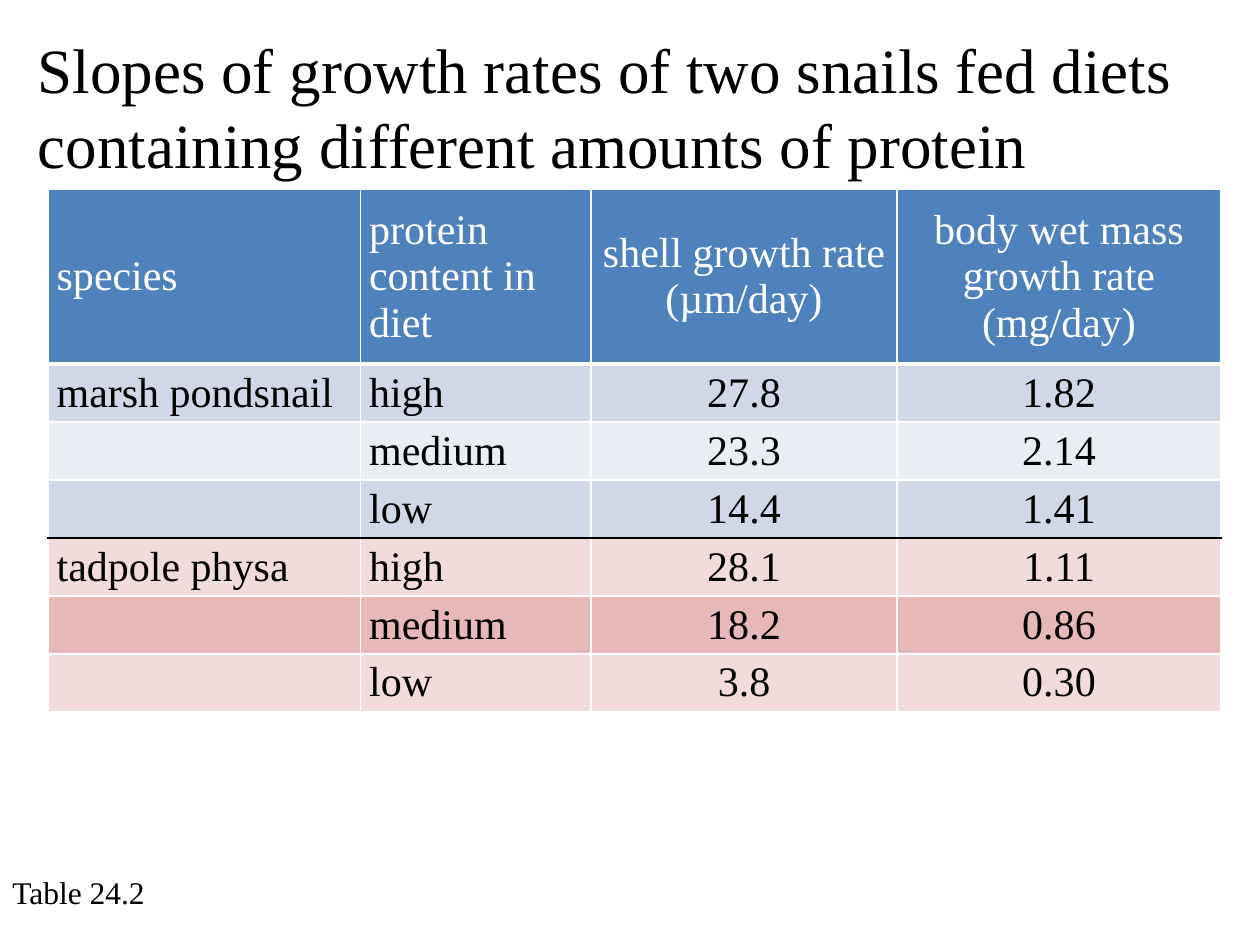
from typing import NamedTuple

from lxml.etree import SubElement
from pptx import Presentation
from pptx.dml.color import RGBColor
from pptx.enum.text import MSO_ANCHOR as Anchor, MSO_AUTO_SIZE as AutoSize, PP_ALIGN as Align
from pptx.oxml.ns import qn
from pptx.util import Inches, Pt

FONT = "Times New Roman"
COLORS = {
    "black": "000000",
    "white": "FFFFFF",
    "header": "4F81BD",
    "blue": "D0D8E8",
    "pale blue": "E9EDF4",
    "pink": "F2DCDB",
    "rose": "E6B9B8",
}


class Rule(NamedTuple):
    color: str
    points: float


class Row(NamedTuple):
    texts: tuple[str, ...]
    fill: str
    below: Rule
    ink: str = "black"
    height: float = 0.46


THIN = Rule("white", 1)
HEADER_RULE = Rule("white", 3)
SPECIES_RULE = Rule("black", 1)

COLUMN_WIDTHS = (2.48, 1.83, 2.43, 2.57)
COLUMN_ALIGNMENTS = (Align.LEFT, Align.LEFT, Align.CENTER, Align.CENTER)
ROWS = (
    Row(("species", "protein content in diet", "shell growth rate (µm/day)",
         "body wet mass growth rate (mg/day)"), "header", HEADER_RULE, "white", 1.39),
    Row(("marsh pondsnail", "high", "27.8", "1.82"), "blue", THIN),
    Row(("", "medium", "23.3", "2.14"), "pale blue", THIN),
    Row(("", "low", "14.4", "1.41"), "blue", SPECIES_RULE),
    Row(("tadpole physa", "high", "28.1", "1.11"), "pink", THIN),
    Row(("", "medium", "18.2", "0.86"), "rose", THIN),
    Row(("", "low", "3.8", "0.30"), "pink", THIN),
)


def write(frame, text: str, size: float, ink: str, align=Align.LEFT) -> None:
    frame.text = text
    for para in frame.paragraphs:
        para.alignment = align
        for span in para.runs:
            span.font.name = FONT
            span.font.size = Pt(size)
            span.font.color.rgb = RGBColor.from_string(COLORS[ink])


def place(shape, left: float, top: float, width: float, height: float) -> None:
    shape.left, shape.top = Inches(left), Inches(top)
    shape.width, shape.height = Inches(width), Inches(height)


def add_border(cell, side: str, rule: Rule) -> None:
    properties = cell._tc.get_or_add_tcPr()
    line = SubElement(properties, qn(f"a:ln{side}"), w=str(Pt(rule.points)))
    fill = SubElement(line, qn("a:solidFill"))
    SubElement(fill, qn("a:srgbClr"), val=COLORS[rule.color])


def format_cell(cell, text: str, row: Row, above: Rule, align) -> None:
    write(cell.text_frame, text, 24, row.ink, align)
    cell.vertical_anchor = Anchor.MIDDLE
    cell.margin_left = cell.margin_right = Inches(0.07)
    cell.margin_top = cell.margin_bottom = 0
    # Borders come before the fill in the cell properties
    for side, rule in (("L", THIN), ("R", THIN), ("T", above), ("B", row.below)):
        add_border(cell, side, rule)
    cell.fill.solid()
    cell.fill.fore_color.rgb = RGBColor.from_string(COLORS[row.fill])


def add_growth_table(page) -> None:
    height = sum(row.height for row in ROWS)
    table = page.shapes.add_table(
        len(ROWS), len(COLUMN_WIDTHS), Inches(0.38), Inches(1.5),
        Inches(sum(COLUMN_WIDTHS)), Inches(height)).table
    for column, width in zip(table.columns, COLUMN_WIDTHS):
        column.width = Inches(width)
    above = THIN
    for index, row in enumerate(ROWS):
        table.rows[index].height = Inches(row.height)
        for number, (text, align) in enumerate(zip(row.texts, COLUMN_ALIGNMENTS)):
            format_cell(table.cell(index, number), text, row, above, align)
        above = row.below


def main() -> None:
    deck = Presentation()
    deck.slide_width, deck.slide_height = Inches(10), Inches(7.5)
    page = deck.slides.add_slide(deck.slide_layouts[5])

    # Title
    title = page.shapes.title
    place(title, 0.2, 0.19, 9.43, 1.31)
    write(title.text_frame, "Slopes of growth rates of two snails fed diets "
          "containing different amounts of protein", 36, "black")
    title.text_frame.word_wrap = True
    title.text_frame.auto_size = AutoSize.SHAPE_TO_FIT_TEXT
    title.text_frame.vertical_anchor = Anchor.TOP

    # Table number
    label = page.shapes.add_textbox(0, Inches(6.88), Inches(1.33), Inches(0.4))
    write(label.text_frame, "Table 24.2", 18, "black")
    label.text_frame.word_wrap = False
    label.text_frame.auto_size = AutoSize.SHAPE_TO_FIT_TEXT

    # Growth rates
    add_growth_table(page)
    deck.save("out.pptx")


if __name__ == "__main__":
    main()
